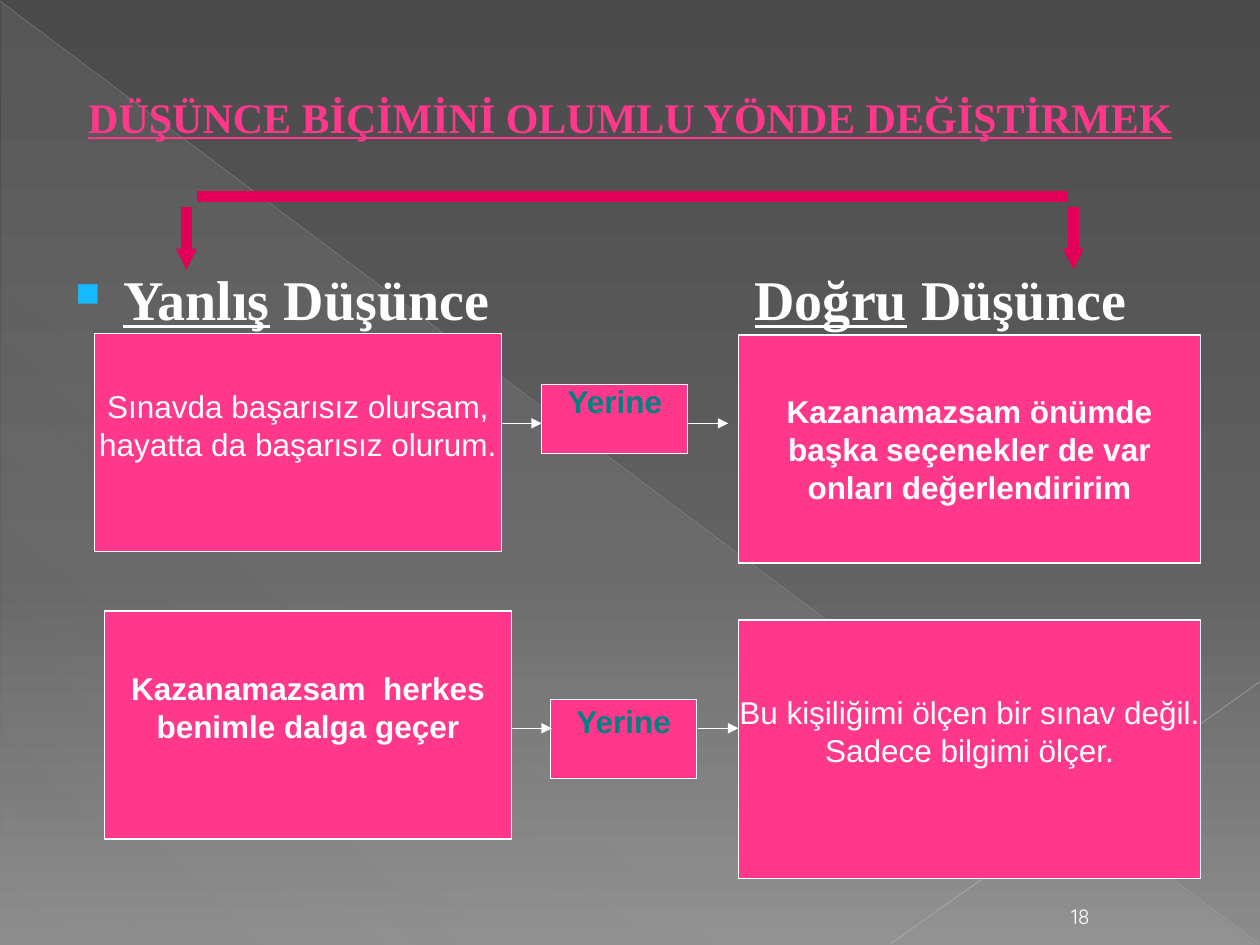
"""Build a slide that sets wrong thoughts against right ones."""
from dataclasses import dataclass

from lxml import etree
from pptx import Presentation
from pptx.dml.color import RGBColor
from pptx.enum.shapes import MSO_CONNECTOR, MSO_SHAPE
from pptx.enum.text import MSO_ANCHOR, MSO_AUTO_SIZE, PP_ALIGN
from pptx.oxml.ns import qn
from pptx.util import Inches, Pt

RECT, WEDGE = MSO_SHAPE.RECTANGLE, MSO_SHAPE.RIGHT_TRIANGLE
STRAIGHT = MSO_CONNECTOR.STRAIGHT
TOP, MIDDLE, BOTTOM = MSO_ANCHOR.TOP, MSO_ANCHOR.MIDDLE, MSO_ANCHOR.BOTTOM
LEFT, CENTER = PP_ALIGN.LEFT, PP_ALIGN.CENTER
NO_FIT = MSO_AUTO_SIZE.NONE


@dataclass(frozen=True)
class Theme:
    pink: str = "FF388C"
    rose: str = "E40059"
    white: str = "FFFFFF"
    teal: str = "008080"
    blue: str = "17BBFD"
    serif: str = "Times New Roman"
    sans: str = "Arial"
    round: str = "Quicksand"
    title: int = 24
    head: int = 32
    body: int = 18
    small: int = 12
    thin: float = 0.75
    thick: float = 6


THEME = Theme()
SKY = [(0, "4A4A4A", 100), (60, "626262", 100), (100, "8C8C8C", 100)]
SHEEN = [(0, "D2D2D2", 10), (70, "D2D2D2", 8), (100, "D2D2D2", 1)]


@dataclass(frozen=True)
class Box:
    area: tuple
    lines: tuple
    bold: bool = False
    color: str = THEME.white
    lift: float = 0.29


@dataclass(frozen=True)
class Line:
    ends: tuple
    color: str = THEME.white
    width: float = THEME.thin
    alpha: int = 100
    head: str = ""


BOXES = [
    Box((0.75, 2.65, 3.23, 1.73),
        ("Sınavda başarısız olursam,", "hayatta da başarısız olurum.")),
    Box((5.86, 2.66, 3.67, 1.81),
        ("Kazanamazsam önümde", "başka seçenekler de var", "onları değerlendiririm"),
        bold=True, lift=0),
    Box((0.83, 4.85, 3.23, 1.81),
        ("Kazanamazsam  herkes", "benimle dalga geçer"), bold=True),
    Box((5.86, 4.92, 3.67, 2.05),
        ("Bu kişiliğimi ölçen bir sınav değil.", "Sadece bilgimi ölçer.")),
    Box((4.3, 3.05, 1.16, 0.55), ("Yerine",), True, THEME.teal),
    Box((4.37, 5.55, 1.16, 0.63), ("Yerine",), True, THEME.teal),
]
RAYS = [
    Line((0, 0.01, 9.99, 7.49), "BFBFBF", 0.39, 35),
    Line((10, 5.41, 7.07, 7.49), "C6C6C6", 0.47, 45),
]
FORK = [Line((1.56, 1.56, 8.48, 1.56), THEME.rose, THEME.thick)] + [
    Line((x, 1.64, x, 2.14), THEME.rose, THEME.thick, head="sm")
    for x in (8.52, 1.48)
]
LINKS = [
    Line((x, y, x + 0.32, y), head="med")
    for x, y in ((3.98, 3.36), (4.06, 5.78), (5.54, 5.78), (5.46, 3.36))
]


def apply(item: object, form: dict) -> None:
    """Set each named value on the item."""
    for name, value in form.items():
        setattr(item, name, value)


def add_sub(node: object, tag: str, **attrs: str) -> object:
    """Add a child element with its attributes."""
    child = etree.SubElement(node, qn(tag))
    for name, value in attrs.items():
        child.set(name, value)
    return child


def fade(color: object, alpha: int) -> None:
    """Make a colour element partly clear."""
    if alpha < 100:
        add_sub(color, "a:alpha", val=str(alpha * 1000))


def blend(fill: object, root: object, stops: list, angle: int) -> None:
    """Fill with a linear gradient of any number of stops."""
    fill.gradient()
    fill.gradient_angle = 360 - angle
    ramp = next(root.iter(qn("a:gsLst")))
    for old in list(ramp):
        ramp.remove(old)
    for place, color, alpha in stops:
        stop = add_sub(ramp, "a:gs", pos=str(place * 1000))
        fade(add_sub(stop, "a:srgbClr", val=color), alpha)


def add_run(para: object, text: str, face: str, size: int, color: str,
            bold: bool = False, under: bool = False) -> None:
    """Add one run of styled text."""
    run = para.add_run()
    run.text = text
    apply(run.font, {"name": face, "size": Pt(size), "bold": bold,
                     "underline": under})
    run.font.color.rgb = RGBColor.from_string(color)


def add_text(slide: object, area: tuple, anchor: object, align: object) -> object:
    """Add a text box and return its first paragraph."""
    frame = slide.shapes.add_textbox(*map(Inches, area)).text_frame
    apply(frame, {"word_wrap": True, "vertical_anchor": anchor})
    para = frame.paragraphs[0]
    para.alignment = align
    return para


def add_line(slide: object, line: Line) -> None:
    """Draw a straight line, with an arrowhead if it has one."""
    link = slide.shapes.add_connector(STRAIGHT, *map(Inches, line.ends))
    link.line.width = Pt(line.width)
    link.line.color.rgb = RGBColor.from_string(line.color)
    props = link.element.spPr
    fade(next(props.iter(qn("a:srgbClr"))), line.alpha)
    if line.head:
        add_sub(props.find(qn("a:ln")), "a:tailEnd", type="triangle",
                w=line.head, len=line.head)
    add_sub(props, "a:effectLst")


def add_box(slide: object, box: Box) -> None:
    """Draw a pink box with centred lines of text."""
    shape = slide.shapes.add_shape(RECT, *map(Inches, box.area))
    shape.shadow.inherit = False
    shape.fill.solid()
    shape.fill.fore_color.rgb = RGBColor.from_string(THEME.pink)
    shape.line.color.rgb = RGBColor.from_string(THEME.white)
    shape.line.width = Pt(THEME.thin)
    frame = shape.text_frame
    apply(frame, {"word_wrap": False, "vertical_anchor": MIDDLE,
                  "margin_left": 0, "margin_right": 0, "margin_top": 0,
                  "margin_bottom": Inches(box.lift)})
    for index, text in enumerate(box.lines):
        para = frame.add_paragraph() if index else frame.paragraphs[0]
        para.alignment = CENTER
        add_run(para, text, THEME.sans, THEME.body, box.color, box.bold)


def add_head(slide: object, area: tuple, word: str, mark: bool) -> None:
    """Write a column heading with its first word underlined."""
    para = add_text(slide, area, TOP, LEFT)
    if mark:
        props = para._p.get_or_add_pPr()
        apply_to = {"marL": Inches(0.38), "indent": -Inches(0.38)}
        for name, value in apply_to.items():
            props.set(name, str(value))
        add_sub(add_sub(props, "a:buClr"), "a:srgbClr", val=THEME.blue)
        add_sub(props, "a:buSzPct", val="60000")
        add_sub(props, "a:buChar", char="■")
    for text, under in ((word, True), (" Düşünce", False)):
        add_run(para, text, THEME.serif, THEME.head, THEME.white, True, under)


def add_title(slide: object) -> None:
    """Place the title above the backdrop."""
    title = slide.shapes.title
    sides = ("left", "top", "width", "height")
    apply(title, dict(zip(sides, map(Inches, (0.5, 0.3, 9, 1.25)))))
    apply(title.text_frame, {"vertical_anchor": MIDDLE, "word_wrap": True,
                             "auto_size": NO_FIT})
    para = title.text_frame.paragraphs[0]
    para.alignment = CENTER
    add_run(para, "DÜŞÜNCE BİÇİMİNİ OLUMLU YÖNDE DEĞİŞTİRMEK", THEME.serif,
            THEME.title, THEME.pink, True, True)
    title.element.getparent().append(title.element)


def main() -> None:
    """Build and save the slide."""
    deck = Presentation()
    apply(deck, {"slide_width": Inches(10), "slide_height": Inches(7.5)})
    slide = deck.slides.add_slide(deck.slide_layouts[5])
    blend(slide.background.fill, slide.element, SKY, 90)
    wedge = slide.shapes.add_shape(WEDGE, *map(Inches, (0.01, 0.02, 9.98, 7.48)))
    wedge.shadow.inherit = False
    wedge.line.fill.background()
    blend(wedge.fill, wedge.element, SHEEN, 133)
    for ray in RAYS:
        add_line(slide, ray)
    add_title(slide)
    add_head(slide, (0.5, 2.05, 4, 0.6), "Yanlış", True)
    add_head(slide, (5.89, 2.05, 3.61, 0.6), "Doğru", False)
    for box in BOXES:
        add_box(slide, box)
    for line in FORK + LINKS:
        add_line(slide, line)
    page = add_text(slide, (8.3, 7.09, 0.55, 0.33), BOTTOM, CENTER)
    add_run(page, "18", THEME.round, THEME.small, THEME.white)
    deck.save("out.pptx")


if __name__ == "__main__":
    main()
